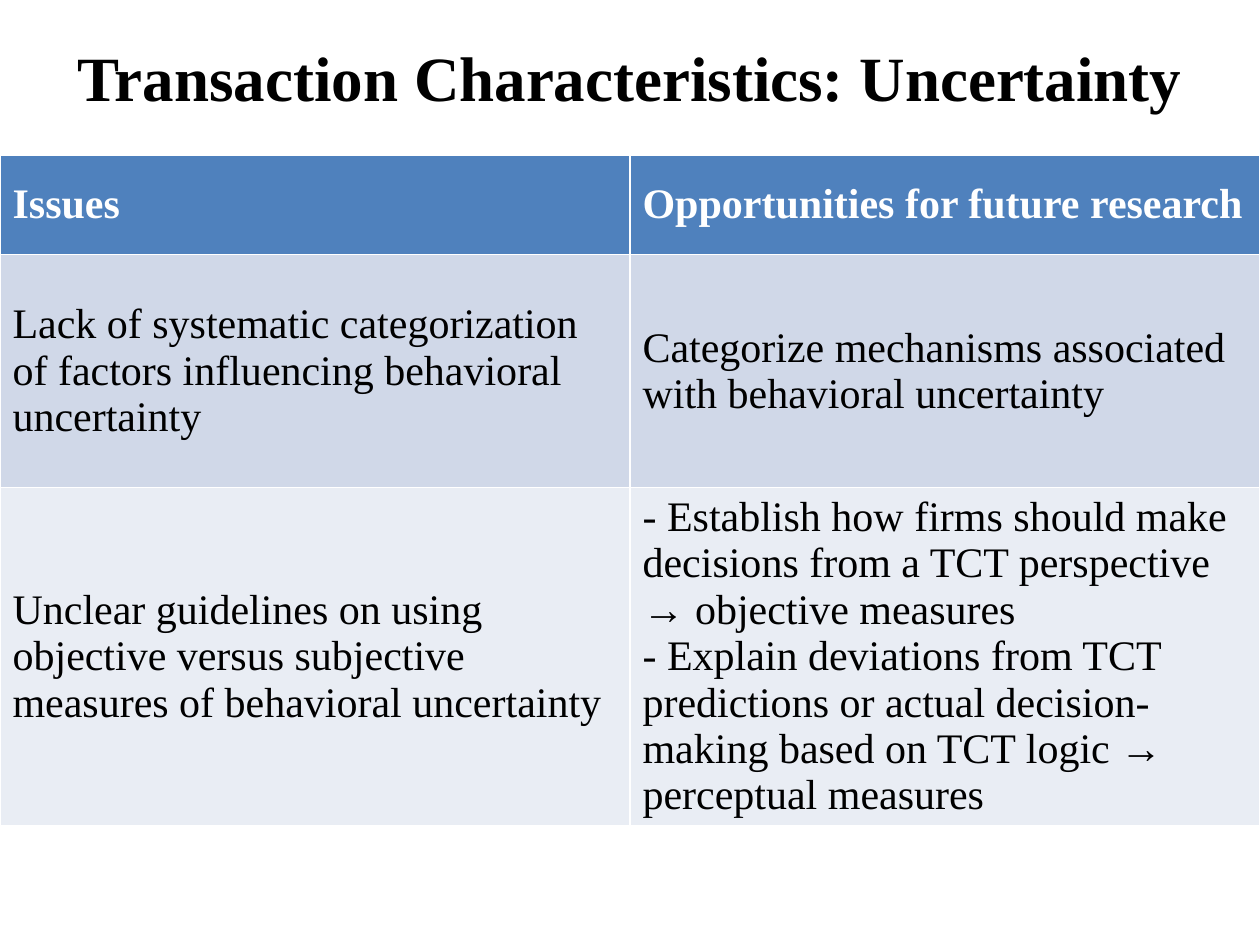
from typing import NamedTuple

from pptx import Presentation
from pptx.dml.color import RGBColor
from pptx.enum.text import MSO_ANCHOR, PP_ALIGN
from pptx.util import Inches, Pt

FONT = "Times New Roman"
BLACK, WHITE = "000000", "FFFFFF"
SLIDE_WIDTH, SLIDE_HEIGHT = Inches(10), Inches(7.5)
TITLE = "Transaction Characteristics: Uncertainty"


class Row(NamedTuple):
    issue: str
    opportunity: str
    height: float
    fill: str
    color: str = BLACK
    bold: bool = False


ROWS = [
    Row("Issues", "Opportunities for future research", 0.79, "4F81BD", WHITE, True),
    Row("Lack of systematic categorization of factors influencing behavioral uncertainty",
        "Categorize mechanisms associated with behavioral uncertainty",
        1.85, "D0D8E8"),
    Row("Unclear guidelines on using objective versus subjective measures of "
        "behavioral uncertainty",
        "- Establish how firms should make decisions from a TCT perspective "
        "→ objective measures\n"
        "- Explain deviations from TCT predictions or actual decision-making "
        "based on TCT logic → perceptual measures",
        1.85, "E9EDF4"),
]


def rgb(color: str) -> RGBColor:
    return RGBColor.from_string(color)


def write(text_frame, text: str, size: int, color: str, bold: bool) -> None:
    text_frame.text = text
    for paragraph in text_frame.paragraphs:
        for run in paragraph.runs:
            run.font.name = FONT
            run.font.size = Pt(size)
            run.font.bold = bold
            run.font.color.rgb = rgb(color)


def add_title(slide) -> None:
    title = slide.shapes.title
    title.left, title.top = 0, Inches(0.18)
    title.width, title.height = SLIDE_WIDTH, Inches(0.85)
    write(title.text_frame, TITLE, 36, BLACK, True)
    title.text_frame.vertical_anchor = MSO_ANCHOR.MIDDLE
    title.text_frame.paragraphs[0].alignment = PP_ALIGN.CENTER


def add_research_table(slide, rows: list[Row]) -> None:
    total_height = Inches(sum(row.height for row in rows))
    table = slide.shapes.add_table(
        len(rows), 2, 0, Inches(1.23), SLIDE_WIDTH, total_height).table
    for table_row, row in zip(table.rows, rows):
        table_row.height = Inches(row.height)
        for cell, text in zip(table_row.cells, (row.issue, row.opportunity)):
            cell.fill.solid()
            cell.fill.fore_color.rgb = rgb(row.fill)
            cell.vertical_anchor = MSO_ANCHOR.MIDDLE
            write(cell.text_frame, text, 24, row.color, row.bold)


def main() -> None:
    presentation = Presentation()
    presentation.slide_width, presentation.slide_height = SLIDE_WIDTH, SLIDE_HEIGHT
    title_only = presentation.slide_layouts.get_by_name("Title Only")
    slide = presentation.slides.add_slide(title_only)
    add_title(slide)
    add_research_table(slide, ROWS)
    presentation.save("out.pptx")


if __name__ == "__main__":
    main()
